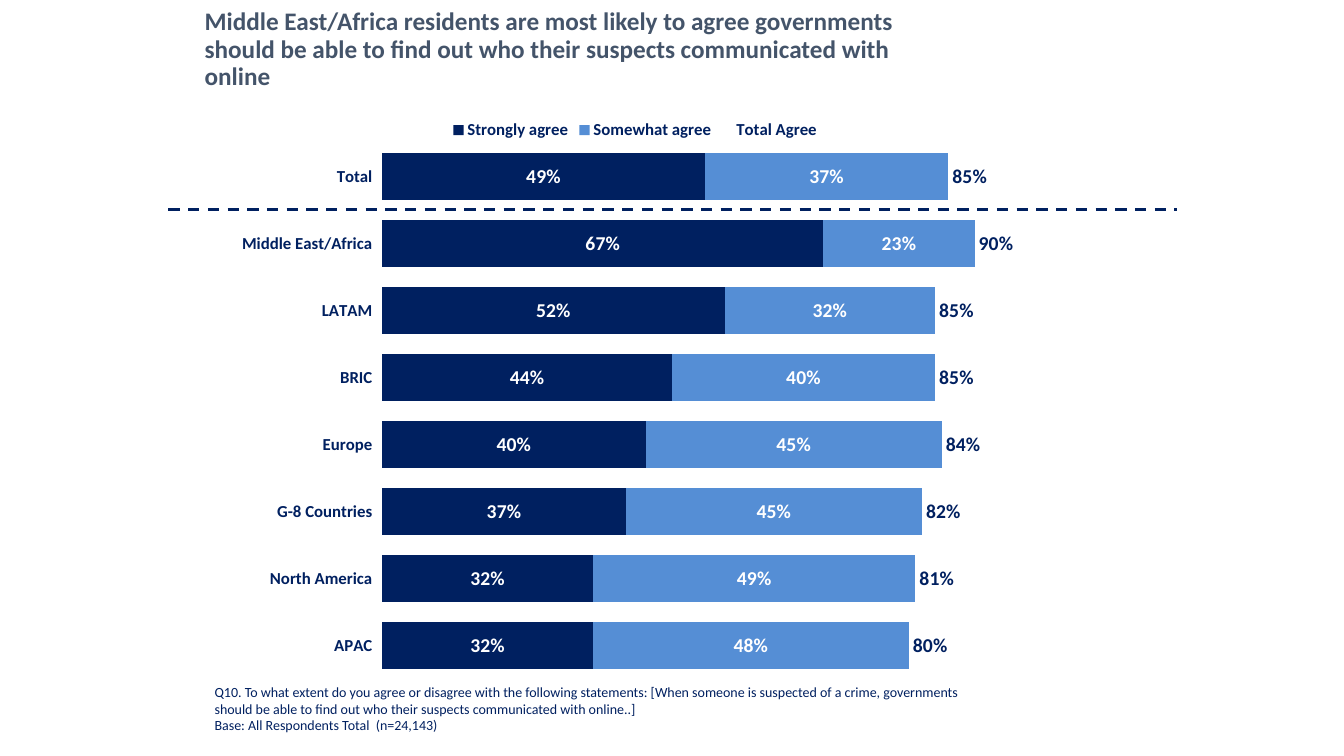
from dataclasses import dataclass
from typing import Optional

from lxml.etree import SubElement
from pptx import Presentation
from pptx.chart.data import CategoryChartData
from pptx.dml.color import RGBColor
from pptx.enum.chart import XL_CHART_TYPE, XL_LABEL_POSITION, XL_LEGEND_POSITION, XL_TICK_MARK
from pptx.enum.dml import MSO_LINE
from pptx.enum.shapes import MSO_CONNECTOR
from pptx.enum.text import MSO_ANCHOR, MSO_AUTO_SIZE, PP_ALIGN
from pptx.oxml import parse_xml
from pptx.oxml.ns import nsdecls, qn
from pptx.util import Inches, Pt

NAVY = RGBColor(0x00, 0x20, 0x60)
BLUE = RGBColor(0x55, 0x8E, 0xD5)
SLATE = RGBColor(0x44, 0x54, 0x6A)
WHITE = RGBColor(0xFF, 0xFF, 0xFF)
FACE = "Calibri"


@dataclass
class Answer:
    name: str
    vals: list[float]
    fill: Optional[RGBColor]
    ink: RGBColor
    place: XL_LABEL_POSITION


REGIONS = ["Total", "Middle East/Africa", "LATAM", "BRIC", "Europe",
           "G-8 Countries", "North America", "APAC"]
ANSWERS = [
    Answer("Strongly agree", [0.49, 0.67, 0.52, 0.44, 0.4, 0.37, 0.32, 0.32],
           NAVY, WHITE, XL_LABEL_POSITION.CENTER),
    Answer("Somewhat agree", [0.37, 0.23, 0.32, 0.4, 0.45, 0.45, 0.49, 0.48],
           BLUE, WHITE, XL_LABEL_POSITION.CENTER),
    Answer("Total Agree", [0.85, 0.9, 0.85, 0.85, 0.84, 0.82, 0.81, 0.8],
           None, NAVY, XL_LABEL_POSITION.INSIDE_BASE),
]
TITLE = ("Middle East/Africa residents are most likely to agree governments "
         "should be able to find out who their suspects communicated with online")
NOTE = ("Q10. To what extent do you agree or disagree with the following statements: "
        "[When someone is suspected of a crime, governments should be able to find out "
        "who their suspects communicated with online..]\n"
        "Base: All Respondents Total  (n=24,143)")


def style(font, size: float, color: RGBColor, bold: bool = True) -> None:
    font.name = FACE
    font.size = Pt(size)
    font.bold = bold
    font.color.rgb = color


def write(shape, text: str, *, size: float, color: RGBColor, bold: bool = False,
          anchor: MSO_ANCHOR = MSO_ANCHOR.TOP, inset: Optional[float] = None,
          pitch: Optional[float] = None) -> None:
    frame = shape.text_frame
    frame.text = text
    frame.word_wrap = True
    frame.auto_size = MSO_AUTO_SIZE.NONE
    frame.vertical_anchor = anchor
    if inset is not None:
        frame.margin_left = frame.margin_right = Inches(inset)
        frame.margin_top = frame.margin_bottom = Inches(inset)
    for para in frame.paragraphs:
        para.alignment = PP_ALIGN.LEFT
        para.line_spacing = pitch
        for run in para.runs:
            style(run.font, size, color, bold)


def set_plot(chart, x: float, y: float, w: float, h: float) -> None:
    area = chart._chartSpace.find(f".//{qn('c:plotArea')}")
    for old in area.findall(qn("c:layout")):
        area.remove(old)
    parts = {"layoutTarget": "inner", "xMode": "edge", "yMode": "edge",
             "x": x, "y": y, "w": w, "h": h}
    body = "".join(f'<c:{key} val="{val}"/>' for key, val in parts.items())
    area.insert(0, parse_xml(f"<c:layout {nsdecls('c')}><c:manualLayout>{body}"
                             "</c:manualLayout></c:layout>"))


def paint(bars, answer: Answer) -> None:
    fill = bars.format.fill
    if answer.fill is None:
        fill.background()
    else:
        fill.solid()
        fill.fore_color.rgb = answer.fill
    bars.format.line.fill.background()
    bars.invert_if_negative = False
    labels = bars.data_labels
    labels.show_value = True
    labels.number_format = "0%"
    labels.number_format_is_linked = False
    labels.position = answer.place
    style(labels.font, 14, answer.ink)


def add_bars(slide) -> None:
    data = CategoryChartData(number_format="0%")
    data.categories = REGIONS
    for answer in ANSWERS:
        data.add_series(answer.name, answer.vals)
    chart = slide.shapes.add_chart(
        XL_CHART_TYPE.BAR_STACKED, Inches(2.12), Inches(1.08),
        Inches(8.36), Inches(5.72), data).chart
    style(chart.font, 12, NAVY)
    chart.has_title = False
    chart.has_legend = True
    chart.legend.position = XL_LEGEND_POSITION.TOP
    chart.legend.include_in_layout = False
    style(chart.legend.font, 12, NAVY)

    rows = chart.category_axis
    rows.reverse_order = True
    rows.major_tick_mark = XL_TICK_MARK.OUTSIDE
    rows.format.line.fill.background()
    style(rows.tick_labels.font, 12, NAVY)
    scale = chart.value_axis
    scale.minimum_scale = 0
    scale.maximum_scale = 1
    scale.has_major_gridlines = False
    scale.visible = False

    plot = chart.plots[0]
    plot.gap_width = 42
    plot.overlap = 100
    plot.vary_by_categories = False
    for bars, answer in zip(plot.series, ANSWERS):
        paint(bars, answer)
    set_plot(chart, 0.2, 0.059, 0.781, 0.93)


def add_rule(slide) -> None:
    rule = slide.shapes.add_connector(MSO_CONNECTOR.STRAIGHT, Inches(1.67), Inches(2.08),
                                      Inches(11.67), Inches(2.08))
    rule.line.color.rgb = NAVY
    rule.line.width = Pt(2)
    rule.line.dash_style = MSO_LINE.DASH
    SubElement(rule._element.spPr, qn("a:effectLst"))


def main() -> None:
    deck = Presentation()
    deck.slide_width = Inches(13.33)
    deck.slide_height = Inches(7.5)
    slide = deck.slides.add_slide(deck.slide_layouts[5])

    add_bars(slide)
    note = slide.shapes.add_textbox(Inches(2.03), Inches(6.73), Inches(7.79), Inches(0.61))
    write(note, NOTE, size=10, color=NAVY)
    add_rule(slide)

    title = slide.shapes.title
    title.left, title.top = Inches(2.03), Inches(0.22)
    title.width, title.height = Inches(7.22), Inches(0.55)
    write(title, TITLE, size=18, color=SLATE, bold=True,
          anchor=MSO_ANCHOR.MIDDLE, inset=0, pitch=0.9)
    deck.save("out.pptx")


if __name__ == "__main__":
    main()
